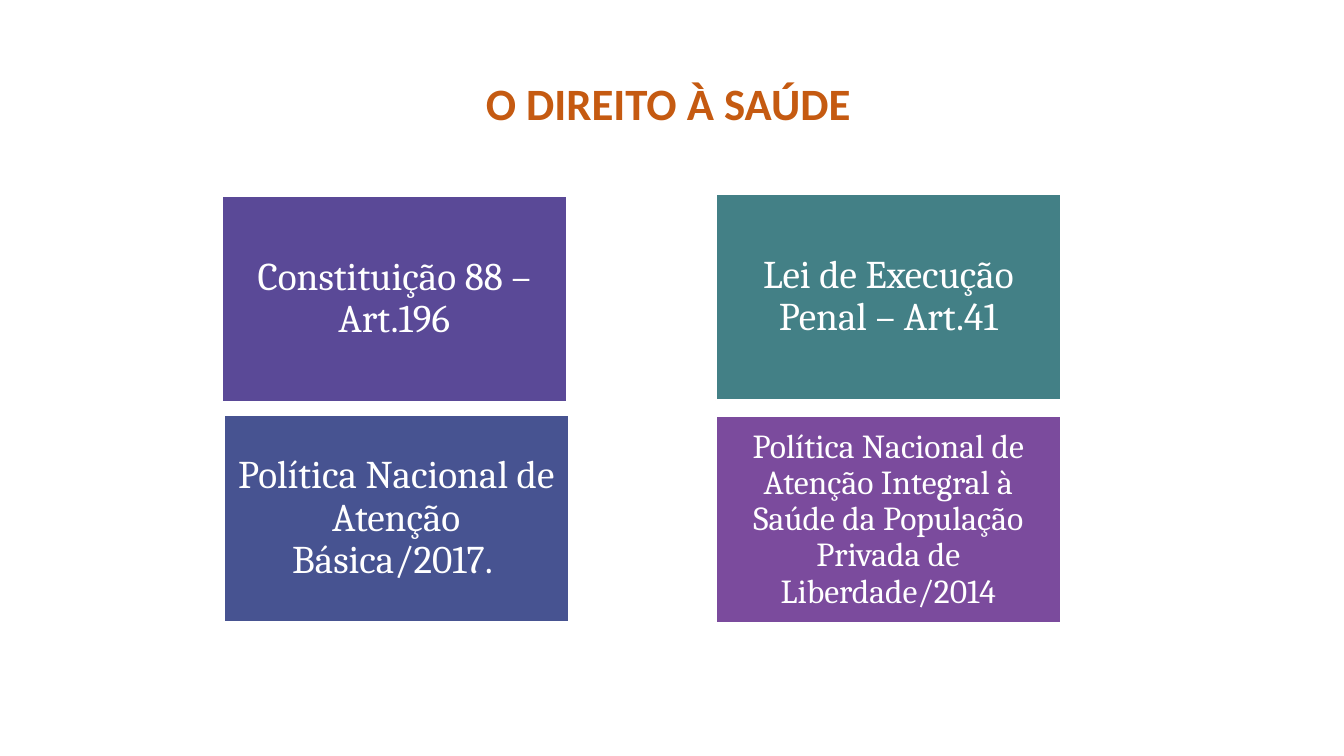
from dataclasses import dataclass

from pptx import Presentation
from pptx.dml.color import RGBColor
from pptx.enum.shapes import MSO_SHAPE as Preset
from pptx.enum.text import MSO_ANCHOR as Anchor, PP_ALIGN as Align
from pptx.slide import Slide
from pptx.text.text import TextFrame
from pptx.util import Inches, Pt


@dataclass(frozen=True)
class Theme:
    title_color: RGBColor = RGBColor(0xC5, 0x5A, 0x11)
    white: RGBColor = RGBColor(0xFF, 0xFF, 0xFF)
    purple: RGBColor = RGBColor(0x5A, 0x49, 0x97)
    teal: RGBColor = RGBColor(0x43, 0x80, 0x86)
    blue: RGBColor = RGBColor(0x47, 0x53, 0x91)
    violet: RGBColor = RGBColor(0x7B, 0x4B, 0x9D)
    title_font: str = "Calibri"
    card_font: str = "Cambria"
    title_size: int = 32
    card_size: int = 28
    small_card_size: int = 24
    border_width: float = 1.5


THEME = Theme()
CARD_WIDTH, CARD_HEIGHT = 3.42, 2.05


@dataclass(frozen=True)
class Card:
    text: str
    left: float
    top: float
    fill: RGBColor
    size: int = THEME.card_size
    inset: float = 0.12


CARDS = (
    Card("Constituição 88 – Art.196", 2.2, 1.94, THEME.purple),
    Card("Lei de Execução Penal – Art.41", 7.1, 1.92, THEME.teal),
    Card("Política Nacional de Atenção Básica/2017. ", 2.22, 4.12, THEME.blue),
    Card(
        "Política Nacional de Atenção Integral à Saúde da População Privada de Liberdade/2014",
        7.1, 4.13, THEME.violet, THEME.small_card_size, 0.1,
    ),
)


def write_centered(frame: TextFrame, text: str, font_name: str, size: int,
                   color: RGBColor, bold: bool = False) -> None:
    frame.word_wrap = True
    frame.vertical_anchor = Anchor.MIDDLE
    paragraph = frame.paragraphs[0]
    paragraph.text = text
    paragraph.alignment = Align.CENTER
    paragraph.line_spacing = 0.9
    font = paragraph.font
    font.name, font.size, font.bold = font_name, Pt(size), bold
    font.color.rgb = color


def add_title(slide: Slide, text: str) -> None:
    box = slide.shapes.add_textbox(Inches(0.93), Inches(0.33), Inches(11.5), Inches(1.45))
    write_centered(box.text_frame, text, THEME.title_font, THEME.title_size,
                   THEME.title_color, bold=True)


def add_card(slide: Slide, card: Card) -> None:
    shape = slide.shapes.add_shape(
        Preset.RECTANGLE, Inches(card.left), Inches(card.top),
        Inches(CARD_WIDTH), Inches(CARD_HEIGHT),
    )
    shape.shadow.inherit = False
    shape.fill.solid()
    shape.fill.fore_color.rgb = card.fill
    shape.line.color.rgb = THEME.white
    shape.line.width = Pt(THEME.border_width)
    frame = shape.text_frame
    frame.margin_left = frame.margin_right = Inches(card.inset)
    frame.margin_top = frame.margin_bottom = Inches(card.inset)
    write_centered(frame, card.text, THEME.card_font, card.size, THEME.white)


def main() -> None:
    presentation = Presentation()
    presentation.slide_width = Inches(13.33)
    presentation.slide_height = Inches(7.5)
    slide = presentation.slides.add_slide(presentation.slide_layouts[6])
    add_title(slide, "O DIREITO À SAÚDE ")
    for card in CARDS:
        add_card(slide, card)
    presentation.save("out.pptx")


if __name__ == "__main__":
    main()
